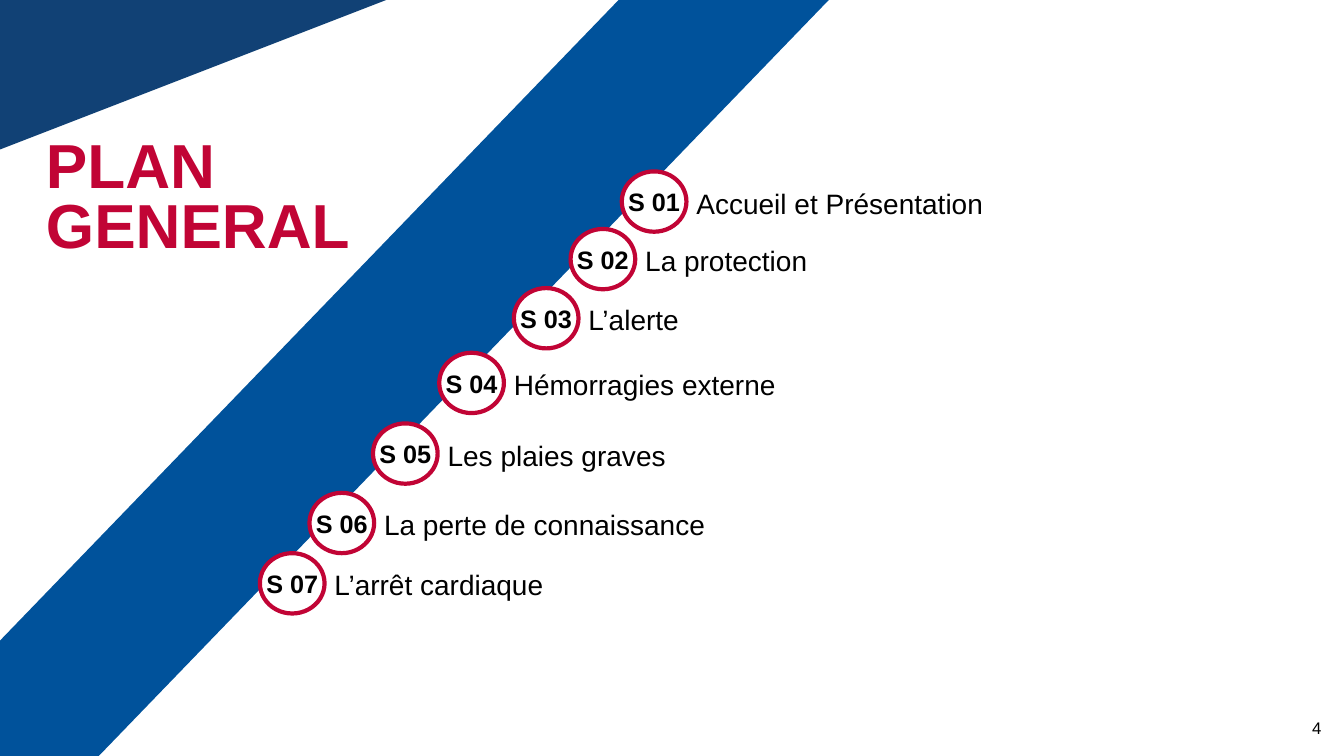
import pptx
import pptx.util
import pptx.dml.color
import pptx.enum.shapes
import pptx.enum.text

Cm, Pt = pptx.util.Cm, pptx.util.Pt
SHAPE = pptx.enum.shapes.MSO_SHAPE
ALIGN = pptx.enum.text.PP_ALIGN
ANCHOR = pptx.enum.text.MSO_ANCHOR

# Content
TITLE = "PLAN GENERAL"
PAGE = "4"
SESSIONS = [  # label, badge left, badge top (cm)
    ("Accueil et Présentation", 15.67, 4.32),
    ("La protection", 14.38, 5.77),
    ("L’alerte", 12.95, 7.26),
    ("Hémorragies externe", 11.07, 8.89),
    ("Les plaies graves", 9.4, 10.67),
    ("La perte de connaissance", 7.8, 12.42),
    ("L’arrêt cardiaque", 6.55, 13.94),
]
COLORS = {"band": "00529B", "corner": "114175", "red": "C10435",
          "white": "FFFFFF", "black": "000000"}
BADGE_W, BADGE_H = 1.63, 1.52
LABEL_W, LABEL_H, LABEL_DROP = 11.13, 0.99, 0.41


def rgb(name):
    return pptx.dml.color.RGBColor.from_string(COLORS[name])


def add_shape(s, kind, box, fill, line=None, rotation=0):
    sp = s.shapes.add_shape(kind, *map(Cm, box))
    sp.shadow.inherit = False
    sp.rotation = rotation
    sp.fill.solid()
    sp.fill.fore_color.rgb = rgb(fill)
    if line:
        sp.line.color.rgb = rgb(line)
        sp.line.width = Pt(3)
    else:
        sp.line.fill.background()
    return sp


def write(sp, text, size=20, color="black", bold=False, align=ALIGN.LEFT,
          anchor=ANCHOR.TOP, wrap=True, spacing=None):
    tf = sp.text_frame
    tf.word_wrap = wrap
    tf.vertical_anchor = anchor
    p = tf.paragraphs[0]
    p.alignment = align
    p.line_spacing = spacing
    r = p.add_run()
    r.text = text
    r.font.name = "Arial"
    r.font.size = Pt(size)
    r.font.bold = bold
    r.font.color.rgb = rgb(color)


def add_text(s, box, text, **fmt):
    write(s.shapes.add_textbox(*map(Cm, box)), text, **fmt)


prs = pptx.Presentation()
prs.slide_width, prs.slide_height = Cm(33.87), Cm(19.05)
s = prs.slides.add_slide(prs.slide_layouts[6])

# Diagonal band and corner triangle
band = add_shape(s, SHAPE.PARALLELOGRAM, (-6.2, 7.49, 30.73, 3.81), "band",
                 rotation=134)
band.adjustments[0] = 0.965
band.element.spPr.xfrm.set("flipV", "1")
add_shape(s, SHAPE.RIGHT_TRIANGLE, (2.95, -3.33, 4.01, 10.36), "corner",
          rotation=90)

# Title and page number
add_text(s, (0.91, 3.43, 9.91, 3.3), TITLE, size=44.4, color="red", bold=True,
         spacing=0.8)
add_text(s, (31.47, 17.81, 2.08, 1.07), PAGE, size=12, align=ALIGN.RIGHT,
         anchor=ANCHOR.MIDDLE)

# Numbered sessions along the band
for number, (label, x, y) in enumerate(SESSIONS, 1):
    badge = add_shape(s, SHAPE.OVAL, (x, y, BADGE_W, BADGE_H), "white", "red")
    write(badge, f"S {number:02}", size=18, bold=True, align=ALIGN.CENTER,
          anchor=ANCHOR.MIDDLE, wrap=False)
    add_text(s, (x + BADGE_W, y + LABEL_DROP, LABEL_W, LABEL_H), label,
             spacing=0.8)

prs.save("out.pptx")
